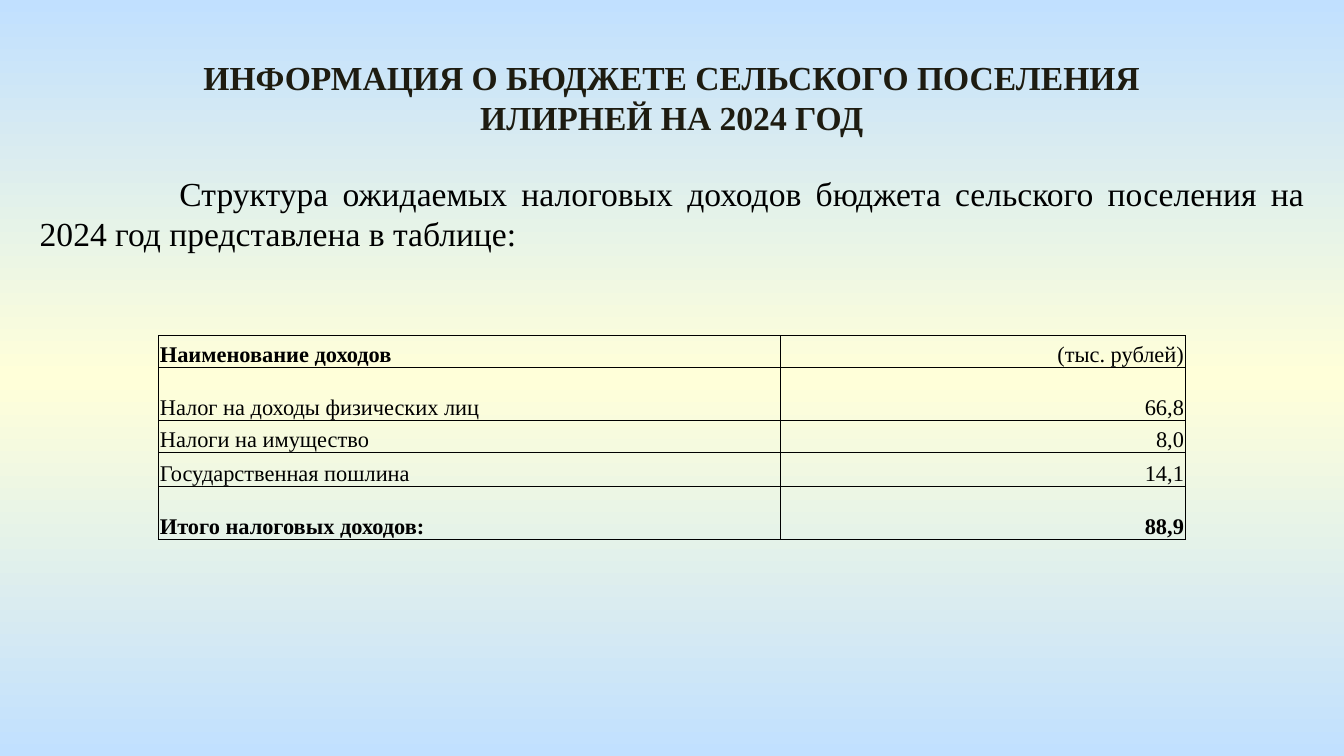
from copy import deepcopy
from typing import NamedTuple

from lxml.etree import SubElement as Sub
from pptx import Presentation
from pptx.dml.color import RGBColor as Rgb
from pptx.enum.text import MSO_ANCHOR as Anchor, PP_ALIGN as Align
from pptx.oxml.ns import qn
from pptx.util import Inches, Pt

WIDE = Inches(10)
HIGH = WIDE * 9 // 16
FONT = "Times New Roman"
BLUE = Rgb(0xC1, 0xE0, 0xFF)
CREAM = Rgb(0xFF, 0xFF, 0xD9)
DARK = Rgb(0x1E, 0x1C, 0x11)
BLACK = Rgb(0, 0, 0)


class Box(NamedTuple):
    """A place given in percent of the slide's size."""
    left: float
    top: float
    width: float
    height: float

    def place(self) -> tuple[int, int, int, int]:
        sides = (WIDE, HIGH, WIDE, HIGH)
        left, top, width, height = (int(part * side / 100)
                                    for part, side in zip(self, sides))
        return left, top, width, height


class Style(NamedTuple):
    size: int
    color: Rgb
    align: Align
    bold: bool = False


class Row(NamedTuple):
    name: str
    value: str
    height: float
    bolds: tuple[bool, bool] = (False, False)


TITLE = Box(11.35, 6.6, 77.3, 12.6)
INTRO = Box(1.97, 22, 96.1, 12.6)
GRID = Box(11.8, 44.4, 76.4, 27)
SPLIT = 60.6  # percent of the table taken by the name column

ROWS = [
    Row("Наименование доходов", "(тыс. рублей)", 0.24, (True, False)),
    Row("Налог на доходы физических лиц", "66,8", 0.39),
    Row("Налоги на имущество", "8,0", 0.24),
    Row("Государственная пошлина", "14,1", 0.25),
    Row("Итого налоговых доходов:", "88,9", 0.4, (True, True)),
]


def write(frame, text: str, style: Style) -> None:
    para = frame.paragraphs[0]
    para.alignment = style.align
    run = para.add_run()
    run.text = text
    font = run.font
    font.name, font.size, font.bold = FONT, Pt(style.size), style.bold
    font.color.rgb = style.color


def add_text(slide, box: Box, text: str, style: Style, indent: float = 0) -> None:
    frame = slide.shapes.add_textbox(*box.place()).text_frame
    frame.word_wrap = True
    write(frame, text, style)
    if indent:
        props = frame.paragraphs[0]._p.get_or_add_pPr()
        props.set("marL", "0")
        props.set("indent", str(Inches(indent)))


def add_lines(cell) -> None:
    props = cell._tc.get_or_add_tcPr()
    for spot, side in enumerate("LRTB"):
        line = Sub(props, qn(f"a:ln{side}"), w=str(Pt(0.5)))
        Sub(Sub(line, qn("a:solidFill")), qn("a:srgbClr"), val=str(BLACK))
        props.insert(spot, line)  # borders come before the fill


def fill_cell(cell, text: str, style: Style) -> None:
    cell.fill.background()
    cell.vertical_anchor = Anchor.BOTTOM
    cell.margin_left = cell.margin_right = cell.margin_top = Inches(0.01)
    cell.margin_bottom = 0
    write(cell.text_frame, text, style)
    add_lines(cell)


def add_grid(slide, box: Box, rows: list[Row]) -> None:
    place = box.place()
    table = slide.shapes.add_table(len(rows), 2, *place).table
    table.first_row = table.horz_banding = False
    for col, share in zip(table.columns, (SPLIT, 100 - SPLIT)):
        col.width = int(place[2] * share / 100)
    for line, row in zip(table.rows, rows):
        line.height = Inches(row.height)
        parts = zip(line.cells, (row.name, row.value),
                    (Align.JUSTIFY, Align.RIGHT), row.bolds)
        for cell, text, align, bold in parts:
            fill_cell(cell, text, Style(12, BLACK, align, bold))


def paint(slide) -> None:
    fill = slide.background.fill
    fill.gradient()
    fill.gradient_angle = 270
    stops = slide._element.find(f".//{qn('a:gsLst')}")
    stops.insert(1, deepcopy(stops[0]))
    for stop, color, spot in zip(fill.gradient_stops, (BLUE, CREAM, BLUE), (0, 0.5, 1)):
        stop.color.rgb = color
        stop.position = spot


def main() -> None:
    deck = Presentation()
    deck.slide_width, deck.slide_height = WIDE, HIGH
    slide = deck.slides.add_slide(deck.slide_layouts[6])

    # Background
    paint(slide)

    # Heading and opening line
    add_text(slide, TITLE,
             "ИНФОРМАЦИЯ О БЮДЖЕТЕ СЕЛЬСКОГО ПОСЕЛЕНИЯ ИЛИРНЕЙ НА 2024 ГОД",
             Style(18, DARK, Align.CENTER, True))
    add_text(slide, INTRO,
             "Структура ожидаемых налоговых доходов бюджета сельского поселения "
             "на 2024 год представлена в таблице:",
             Style(18, BLACK, Align.JUSTIFY), indent=1.04)

    # Tax income table
    add_grid(slide, GRID, ROWS)

    deck.save("out.pptx")


if __name__ == "__main__":
    main()
